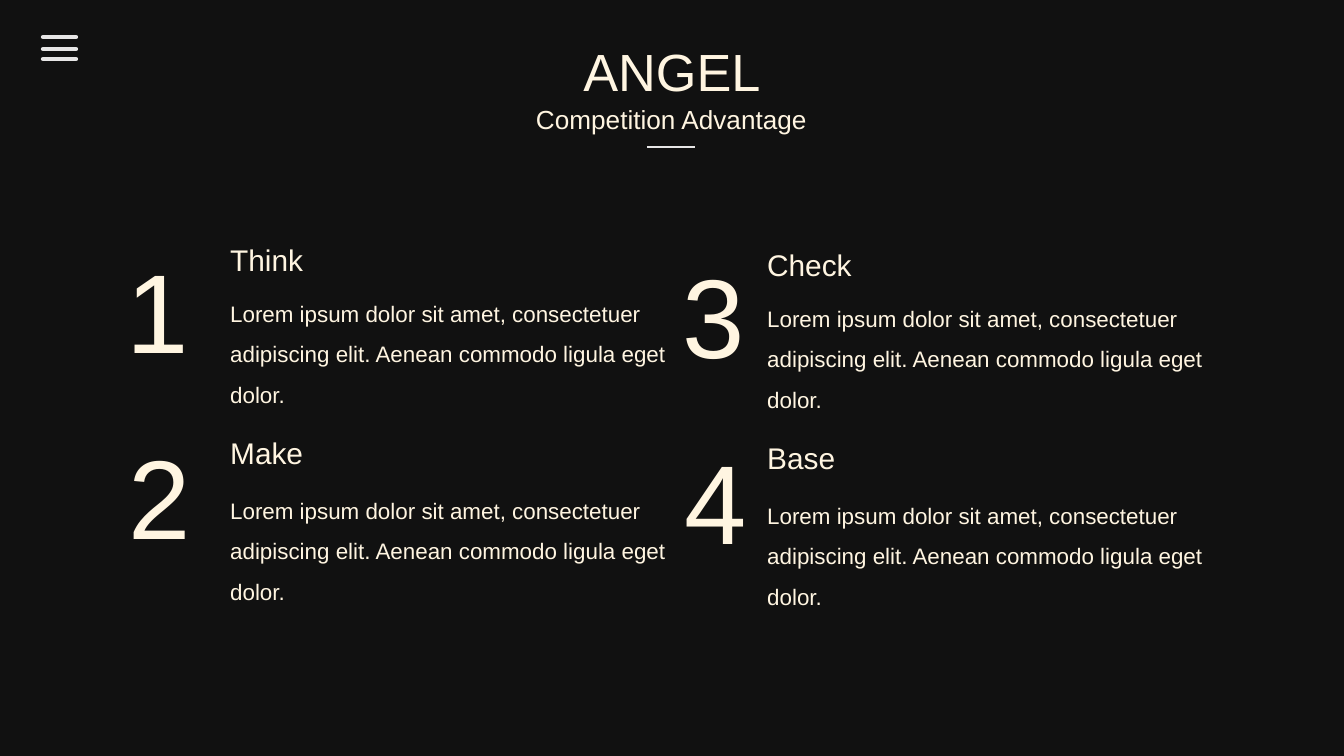
"""Build the Competition Advantage slide with four numbered points."""
import dataclasses

import pptx
import pptx.dml.color
import pptx.enum.shapes
import pptx.enum.text
import pptx.oxml
import pptx.util
from lxml import etree

SLIDE_WIDTH, SLIDE_HEIGHT = 1344, 756
PX = pptx.util.Inches(10) / SLIDE_WIDTH


@dataclasses.dataclass(frozen=True)
class Theme:
    font: str = "Arial"
    background: str = "111111"
    text: str = "FFF5E1"
    line: str = "E7E6E6"
    title: int = 28
    subtitle: int = 14
    number: int = 60
    heading: int = 16
    body: int = 12
    rule: float = 1.5
    menu: float = 2.25


THEME = Theme()
TITLE = ("ANGEL", (569, 32, 206, 77))
SUBTITLE = ("Competition Advantage", (481, 97, 381, 46))
RULE = (647, 695, 147)
MENU_LEFT, MENU_RIGHT = 43, 76
MENU_ROWS = (37, 49, 59)
BODY = (
    "Lorem ipsum dolor sit amet, consectetuer adipiscing elit. "
    "Aenean commodo ligula eget dolor."
)
COLUMNS = (
    {"number_left": 113, "text_left": 217, "drop": 0,
     "points": (("1", "Think", 102), ("2", "Make", 101))},
    {"number_left": 669, "text_left": 754, "drop": 5,
     "points": (("3", "Check", 113), ("4", "Base", 95))},
)
ROWS = (
    {"number_top": 235, "heading_top": 235, "body_top": 280, "body_width": 478, "shift": 0},
    {"number_top": 421, "heading_top": 428, "body_top": 477, "body_width": 465, "shift": 2},
)
NUMBER_WIDTH, NUMBER_HEIGHT = 87, 149
HEADING_HEIGHT, BODY_HEIGHT = 50, 132


def emu(*lengths):
    return [pptx.util.Emu(round(length * PX)) for length in lengths]


def color(value):
    return pptx.dml.color.RGBColor.from_string(value)


def write(shape, text, size, centered=False, wrap=False, spacing=None):
    frame = shape.text_frame
    frame.word_wrap = wrap
    frame.auto_size = pptx.enum.text.MSO_AUTO_SIZE.NONE
    frame.vertical_anchor = pptx.enum.text.MSO_ANCHOR.TOP
    paragraph = frame.paragraphs[0]
    alignment = pptx.enum.text.PP_ALIGN
    paragraph.alignment = alignment.CENTER if centered else alignment.LEFT
    if spacing:
        paragraph.line_spacing = spacing
    run = paragraph.add_run()
    run.text = text
    run.font.name = THEME.font
    run.font.size = pptx.util.Pt(size)
    run.font.color.rgb = color(THEME.text)


def add_text(slide, box, text, size, **options):
    write(slide.shapes.add_textbox(*emu(*box)), text, size, **options)


def add_line(shapes, left, right, top, width, rounded=False):
    connector = shapes.add_connector(
        pptx.enum.shapes.MSO_CONNECTOR.STRAIGHT, *emu(left, top, right, top)
    )
    connector.line.color.rgb = color(THEME.line)
    connector.line.width = pptx.util.Pt(width)
    if rounded:
        connector.line._get_or_add_ln().set("cap", "rnd")
    etree.SubElement(connector._element.spPr, pptx.oxml.ns.qn("a:effectLst"))


def add_header(slide):
    text, box = TITLE
    title = slide.shapes.title
    title.left, title.top, title.width, title.height = emu(*box)
    write(title, text, THEME.title, centered=True)
    text, box = SUBTITLE
    add_text(slide, box, text, THEME.subtitle, centered=True)
    add_line(slide.shapes, *RULE, THEME.rule)
    menu = slide.shapes.add_group_shape()
    for top in MENU_ROWS:
        add_line(menu.shapes, MENU_LEFT, MENU_RIGHT, top, THEME.menu, rounded=True)


def add_point(slide, column, row, point):
    number, heading, heading_width = point
    left, drop = column["text_left"], column["drop"]
    heading_box = (left, row["heading_top"] + drop, heading_width, HEADING_HEIGHT)
    body_box = (left, row["body_top"] + drop, row["body_width"], BODY_HEIGHT)
    number_box = (
        column["number_left"] + row["shift"], row["number_top"] + drop,
        NUMBER_WIDTH, NUMBER_HEIGHT,
    )
    add_text(slide, heading_box, heading, THEME.heading)
    add_text(slide, body_box, BODY, THEME.body, wrap=True, spacing=1.5)
    add_text(slide, number_box, number, THEME.number)


def main():
    presentation = pptx.Presentation()
    presentation.slide_width, presentation.slide_height = emu(SLIDE_WIDTH, SLIDE_HEIGHT)
    slide = presentation.slides.add_slide(presentation.slide_layouts[5])
    slide.background.fill.solid()
    slide.background.fill.fore_color.rgb = color(THEME.background)
    add_header(slide)
    for column in COLUMNS:
        for row, point in zip(ROWS, column["points"]):
            add_point(slide, column, row, point)
    presentation.save("out.pptx")


if __name__ == "__main__":
    main()
